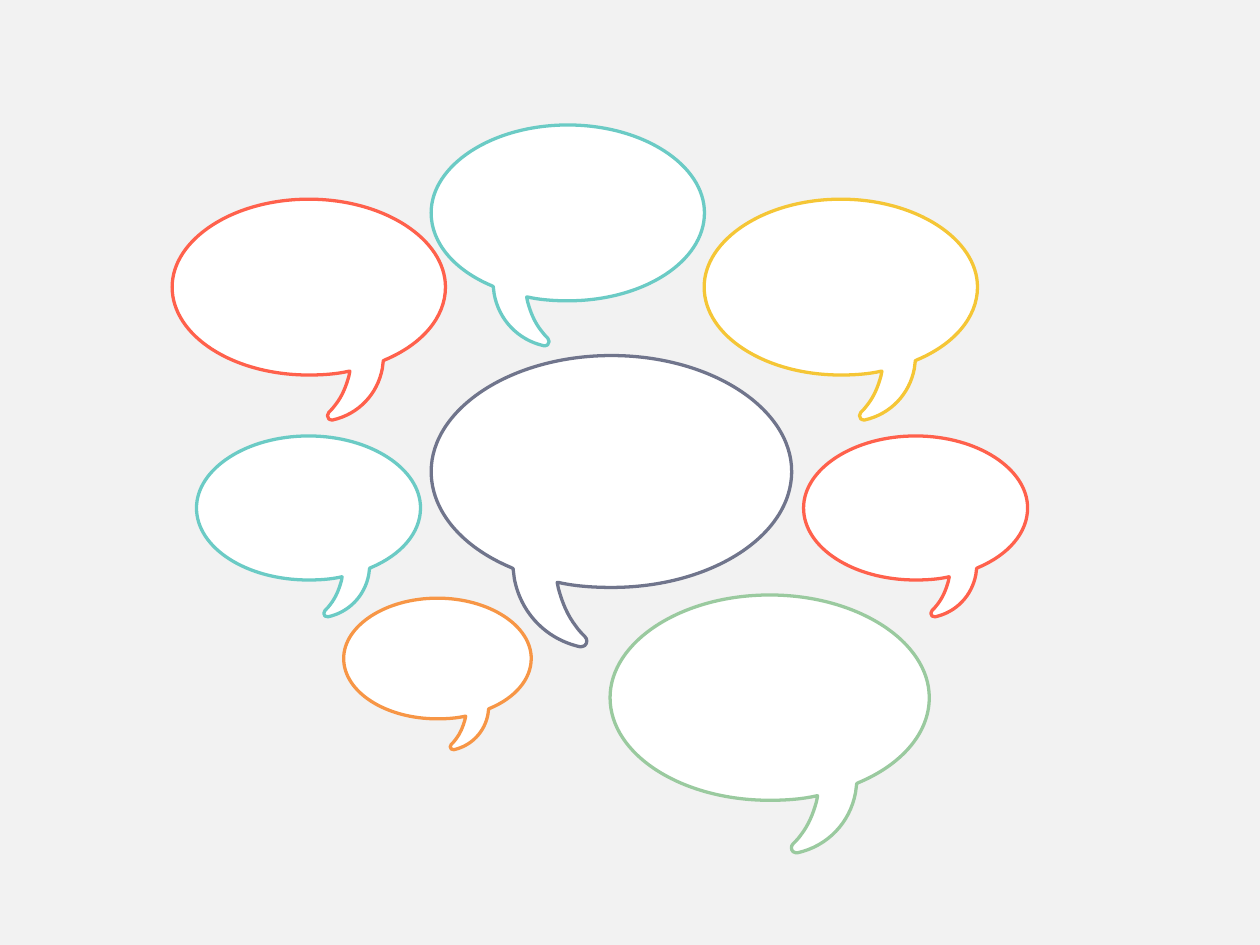
from dataclasses import dataclass
from itertools import chain

from lxml import etree
from pptx import Presentation
from pptx.dml.color import RGBColor
from pptx.oxml.ns import qn
from pptx.util import Pt

BLANK_LAYOUT = 6
LINE_TO = qn("a:lnTo")
CURVE_TO = qn("a:cubicBezTo")
OUTLINE_WIDTH = 286
OUTLINE_START = (143, 0)
OUTLINE = [
    [(222, 0), (286, 42), (286, 92)],
    [(286, 143), (222, 184), (143, 184)],
    [(129, 184), (114, 183), (101, 180)],
    [(100, 180)],
    [(101, 185)],
    [(104, 196), (108, 206), (115, 215)],
    [(117, 218), (120, 221), (122, 223)],
    [(124, 225), (124, 228), (122, 230)],
    [(121, 231), (119, 231), (118, 231)],
    [(91, 225), (71, 204), (66, 177)],
    [(65, 169)],
    [(63, 168)],
    [(25, 152), (0, 124), (0, 92)],
    [(0, 42), (64, 0), (143, 0)],
]


@dataclass(frozen=True)
class Theme:
    """Colours and line weight of the slide."""
    background: str = "F2F2F2"
    bubble: str = "FFFFFF"
    teal: str = "6BCBC5"
    slate: str = "70758C"
    yellow: str = "F5C636"
    red: str = "FF614C"
    orange: str = "F79646"
    green: str = "9ACA9F"
    outline: float = 1.88


THEME = Theme()
BUBBLES = [
    (246.4, 71.4, 156.2, THEME.teal, True),
    (246.4, 203.2, 206, THEME.slate, True),
    (402.4, 113.8, 156.2, THEME.yellow, False),
    (98.4, 113.8, 156.2, THEME.red, False),
    (112.3, 249.1, 128, THEME.teal, False),
    (459.2, 249.1, 128, THEME.red, False),
    (196.4, 341.8, 107.2, THEME.orange, False),
    (348.6, 340, 182.4, THEME.green, False),
]


def paint(fill, colour):
    """Give a fill one solid colour."""
    fill.solid()
    fill.fore_color.rgb = RGBColor.from_string(colour)


def round_outline(bubble):
    """Join each run of three control points into one Bezier curve."""
    steps = iter(list(bubble._element.iter(LINE_TO)))
    for segment in OUTLINE:
        first, *others = [next(steps) for point in segment]
        if others:
            curve = etree.Element(CURVE_TO)
            first.addprevious(curve)
            for step in (first, *others):
                curve.append(step[0])
                step.getparent().remove(step)


def add_bubble(slide, left, top, width, colour, tail_left):
    """Add a speech bubble, mirrored when its tail is on the right."""
    scale = width / OUTLINE_WIDTH
    start, *points = [
        (Pt(left + scale * (x if tail_left else OUTLINE_WIDTH - x)), Pt(top + scale * y))
        for x, y in chain([OUTLINE_START], *OUTLINE)
    ]
    builder = slide.shapes.build_freeform(*start)
    builder.add_line_segments(points, close=True)
    bubble = builder.convert_to_shape()
    round_outline(bubble)
    bubble.shadow.inherit = False
    paint(bubble.fill, THEME.bubble)
    paint(bubble.line.fill, colour)
    bubble.line.width = Pt(THEME.outline)


def main():
    """Build the slide of speech bubbles."""
    deck = Presentation()
    deck.slide_width, deck.slide_height = Pt(720), Pt(540)
    slide = deck.slides.add_slide(deck.slide_layouts[BLANK_LAYOUT])
    paint(slide.background.fill, THEME.background)
    for bubble in BUBBLES:
        add_bubble(slide, *bubble)
    deck.save("out.pptx")


if __name__ == "__main__":
    main()
